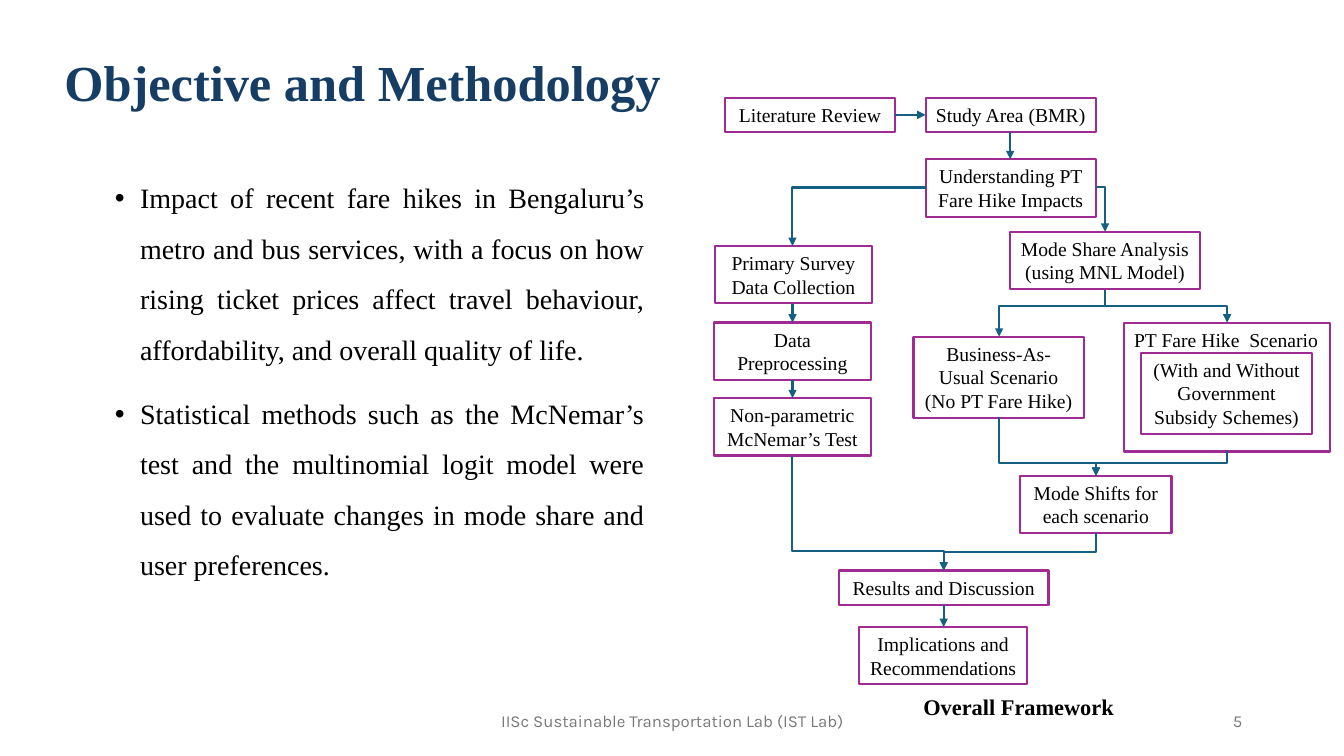
from lxml.etree import SubElement
from pptx import Presentation
from pptx.dml.color import RGBColor
from pptx.enum.shapes import MSO_CONNECTOR as Route, MSO_SHAPE as Preset
from pptx.enum.text import MSO_ANCHOR as Anchor, MSO_AUTO_SIZE as Fit, PP_ALIGN as Align
from pptx.oxml.ns import qn
from pptx.util import Inches, Pt

SERIF, SANS = "Times New Roman", "Karla"
BLACK, NAVY, GREY = "000000", "163E64", "797979"
PURPLE, TEAL, WHITE = "A02B93", "156082", "FFFFFF"


def rgb(value):
    return RGBColor.from_string(value)


def write(shape, paragraphs, size, color=BLACK, font=SERIF, bold=False,
          align=Align.LEFT, anchor=Anchor.TOP):
    frame = shape.text_frame
    frame.word_wrap = True
    frame.vertical_anchor = anchor
    frame.text = "\n".join(paragraphs)
    for paragraph in frame.paragraphs:
        paragraph.alignment = align
        for run in paragraph.runs:
            run.font.size, run.font.name, run.font.bold = Pt(size), font, bold
            run.font.color.rgb = rgb(color)
    return frame


deck = Presentation()
deck.slide_width, deck.slide_height = Inches(13.33), Inches(7.5)
slide = deck.slides.add_slide(deck.slide_layouts[6])
shapes = slide.shapes

# Title
title = shapes.add_textbox(Inches(0.54), Inches(0.28), Inches(11.5), Inches(1.13))
heading = write(title, ["Objective and Methodology"], 36, NAVY, bold=True, anchor=Anchor.MIDDLE)
heading.paragraphs[0].line_spacing = 0.9

# Objective and method bullets
objectives = shapes.add_textbox(Inches(1.04), Inches(1.58), Inches(5.45), Inches(4.76))
points = write(objectives, [
    "Impact of recent fare hikes in Bengaluru’s metro and bus services, with a focus on how "
    "rising ticket prices affect travel behaviour, affordability, and overall quality of life.",
    "Statistical methods such as the McNemar’s test and the multinomial logit model were used "
    "to evaluate changes in mode share and user preferences.",
], 20, align=Align.JUSTIFY)
for number, point in enumerate(points.paragraphs):
    point.line_spacing = 1.5
    point.space_before = Pt(10 if number else 0)
    props = point._p.get_or_add_pPr()
    props.set("marL", str(Inches(0.25)))
    props.set("indent", str(-Inches(0.25)))
    SubElement(props, qn("a:buFont"), typeface="Arial")
    SubElement(props, qn("a:buChar"), char="•")

# Framework steps: text, left, top, width, height
ONE, TWO, THREE = 0.34, 0.57, 0.81
steps = [
    ("PT Fare Hike  Scenario", 11.15, 3.2, 2.04, 1.28),
    ("Study Area (BMR)", 9.18, 0.97, 1.69, ONE),
    ("Literature Review", 7.19, 0.97, 1.69, ONE),
    ("Understanding PT Fare Hike Impacts", 9.18, 1.58, 1.69, TWO),
    ("Primary Survey Data Collection", 7.09, 2.44, 1.56, TWO),
    ("Data Preprocessing", 7.08, 3.2, 1.56, TWO),
    ("Non-parametric McNemar’s Test", 7.08, 3.95, 1.56, TWO),
    ("Mode Share Analysis (using MNL Model)", 10.02, 2.3, 1.88, TWO),
    ("Business-As-Usual Scenario (No PT Fare Hike)", 9.06, 3.34, 1.69, THREE),
    ("(With and Without Government Subsidy Schemes)", 11.32, 3.5, 1.69, THREE),
    ("Mode Shifts for each scenario", 10.12, 4.72, 1.5, TWO),
    ("Results and Discussion", 8.32, 5.66, 2.08, ONE),
    ("Implications and Recommendations", 8.52, 6.22, 1.67, TWO),
]
for text, left, top, width, height in steps:
    step = shapes.add_shape(Preset.RECTANGLE, Inches(left), Inches(top), Inches(width), Inches(height))
    step.shadow.inherit = False
    step.fill.solid()
    step.fill.fore_color.rgb = rgb(WHITE)
    step.line.color.rgb = rgb(PURPLE)
    step.line.width = Pt(1.5)
    is_scenario_frame = text.startswith("PT Fare")
    label = write(step, [text], 14, align=Align.LEFT if is_scenario_frame else Align.CENTER)
    if is_scenario_frame:
        label.word_wrap = False
    else:
        label.auto_size = Fit.SHAPE_TO_FIT_TEXT

# Arrows: start, end, and the route ("corner", or the height of the crossbar)
SURVEY, RESULTS, SHARE, USUAL, HIKE, SHIFTS = 7.86, 9.36, 10.96, 9.91, 12.17, 10.87
arrows = [
    (8.88, 1.14, 9.18, 1.14, None),
    (10.02, 1.31, 10.02, 1.58, None),
    (9.18, 1.86, SURVEY, 2.44, "corner"),
    (10.87, 1.86, SHARE, 2.3, "corner"),
    (SURVEY, 3.02, SURVEY, 3.2, None),
    (SURVEY, 3.77, SURVEY, 3.95, None),
    (SURVEY, 4.52, RESULTS, 5.66, 5.47),
    (SHIFTS, 5.29, RESULTS, 5.66, 5.48),
    (RESULTS, 6, RESULTS, 6.22, None),
    (SHARE, 2.88, USUAL, 3.34, 3.04),
    (HIKE, 4.47, SHIFTS, 4.72, 4.59),
    (SHARE, 2.88, HIKE, 3.2, 3.04),
    (USUAL, 4.14, SHIFTS, 4.72, 4.59),
]
for x1, y1, x2, y2, route in arrows:
    arrow = shapes.add_connector(Route.ELBOW if route else Route.STRAIGHT,
                                 Inches(x1), Inches(y1), Inches(x2), Inches(y2))
    arrow.line.color.rgb = rgb(TEAL)
    arrow.line.width = Pt(1.5)
    properties = arrow._element.spPr
    SubElement(arrow.line._get_or_add_ln(), qn("a:tailEnd"), type="triangle")
    SubElement(properties, qn("a:effectLst"))
    geometry = properties.find(qn("a:prstGeom"))
    if route == "corner":
        geometry.set("prst", "bentConnector2")
    elif route:
        # Turn the elbow a quarter so that it leaves and arrives vertically
        drop, span = y2 - y1, abs(x2 - x1)
        arrow.left, arrow.top = Inches((x1 + x2 - drop) / 2), Inches((y1 + y2 - span) / 2)
        arrow.width, arrow.height = Inches(drop), Inches(span)
        frame = properties.find(qn("a:xfrm"))
        frame.attrib.clear()
        frame.set("rot", str((90 if x2 < x1 else 270) * 60000))
        if x2 > x1:
            frame.set("flipH", "1")
        guides = geometry.find(qn("a:avLst"))
        SubElement(guides, qn("a:gd"), name="adj1", fmla=f"val {round((route - y1) / drop * 100000)}")

# Framework caption
caption = shapes.add_textbox(Inches(9.06), Inches(6.83), Inches(2.15), Inches(0.37))
write(caption, ["Overall Framework"], 16, bold=True)

# Footer and page number
for text, left, width, align in [
    ("IISc Sustainable Transportation Lab (IST Lab)", 4.42, 4.5, Align.CENTER),
    ("5", 9.42, 3, Align.RIGHT),
]:
    footer = shapes.add_textbox(Inches(left), Inches(6.95), Inches(width), Inches(0.4))
    write(footer, [text], 12, GREY, SANS, align=align, anchor=Anchor.MIDDLE)

deck.save("out.pptx")
